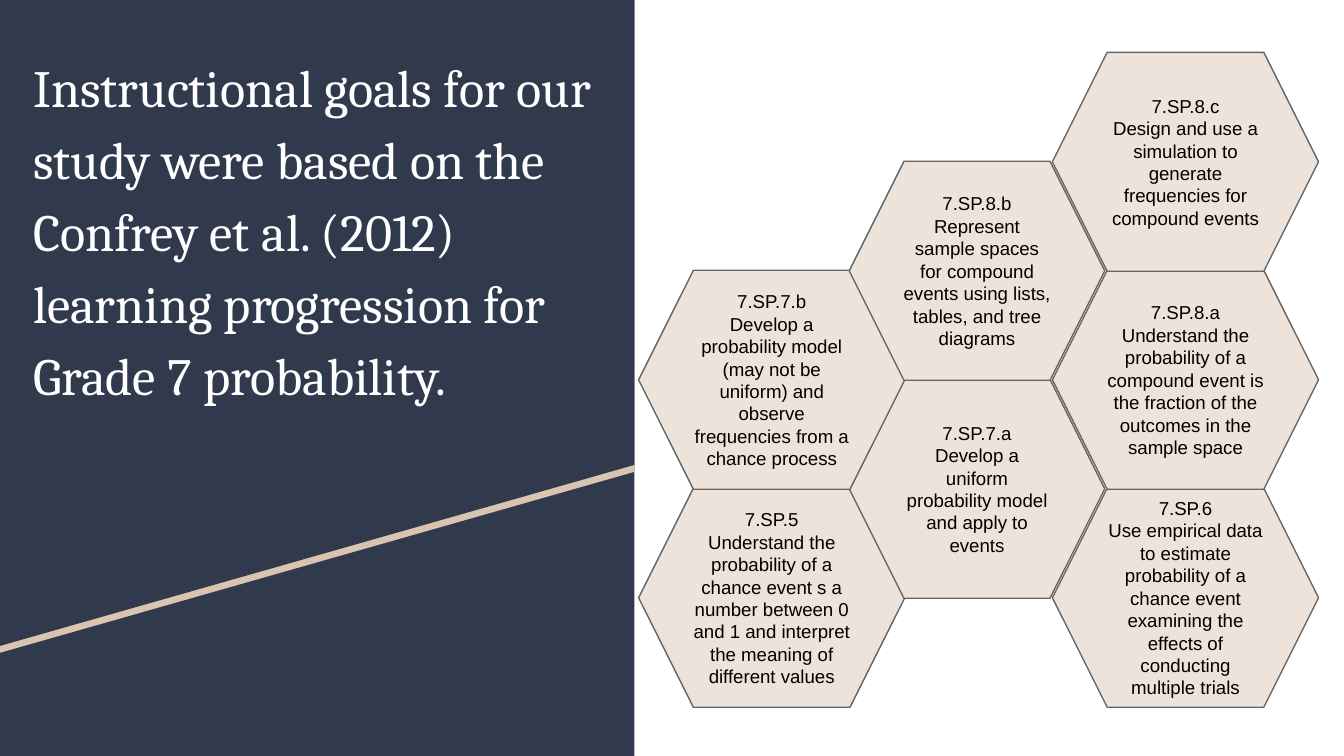
from dataclasses import dataclass

from pptx import Presentation
from pptx.dml.color import RGBColor
from pptx.enum.shapes import MSO_SHAPE as Preset
from pptx.enum.text import MSO_ANCHOR as Anchor, MSO_AUTO_SIZE as AutoSize, PP_ALIGN as Align
from pptx.util import Cm, Pt


@dataclass(frozen=True)
class Theme:
    navy: RGBColor = RGBColor(0x31, 0x39, 0x4D)
    tan: RGBColor = RGBColor(0xD9, 0xC4, 0xB1)
    cream: RGBColor = RGBColor(0xED, 0xE3, 0xDA)
    grey: RGBColor = RGBColor(0x66, 0x66, 0x66)
    white: RGBColor = RGBColor(0xFF, 0xFF, 0xFF)
    black: RGBColor = RGBColor(0, 0, 0)
    title_font: str = "Cambria"
    label_font: str = "Arial"
    title_size: Pt = Pt(28)
    label_size: Pt = Pt(10)


THEME = Theme()
SLIDE_WIDTH, SLIDE_HEIGHT = 25.4, 14.29
PANEL_WIDTH = 11.99
STRIPE_DROP = 0.13

TITLE = ("Instructional goals for our study were based on the "
         "Confrey et al. (2012) learning progression for Grade 7 probability.")

# Honeycomb columns: left edge and width; each row is half a cell lower.
COLUMNS = [(12.07, 5.03), (16.05, 4.83), (19.89, 5.03)]
FIRST_TOP, ROW_STEP, CELL_HEIGHT = 0.99, 2.06, 4.14

# Column, row, standard, goal
GOALS = [
    (0, 4, "7.SP.5", "Understand the probability of a chance event s a number "
                     "between 0 and 1 and interpret the meaning of different values"),
    (2, 4, "7.SP.6", "Use empirical data to estimate probability of a chance event "
                     "examining the effects of conducting multiple trials"),
    (1, 3, "7.SP.7.a", "Develop a uniform probability model and apply to events"),
    (0, 2, "7.SP.7.b", "Develop a probability model (may not be uniform) and observe "
                       "frequencies from a chance process"),
    (2, 2, "7.SP.8.a", "Understand the probability of a compound event is the fraction "
                       "of the outcomes in the sample space"),
    (1, 1, "7.SP.8.b", "Represent sample spaces for compound events using lists, "
                       "tables, and tree diagrams"),
    (2, 0, "7.SP.8.c", "Design and use a simulation to generate frequencies "
                       "for compound events"),
]


def write_text(shape, *lines, font, size, color, align, anchor, spacing=1.0, after=0):
    """Fill the shape with one paragraph per line."""
    frame = shape.text_frame
    frame.word_wrap = True
    frame.auto_size = AutoSize.NONE
    frame.vertical_anchor = anchor
    frame.margin_left = frame.margin_right = Cm(0.25)
    frame.margin_top = frame.margin_bottom = Cm(0.25)
    for index, line in enumerate(lines):
        para = frame.paragraphs[0] if index == 0 else frame.add_paragraph()
        para.alignment = align
        para.line_spacing = spacing
        para.space_before, para.space_after = Pt(0), Pt(after)
        span = para.add_run()
        span.text = line
        span.font.name, span.font.size = font, size
        span.font.color.rgb = color


def paint(shape, fill, line=None):
    shape.shadow.inherit = False
    shape.fill.solid()
    shape.fill.fore_color.rgb = fill
    if line is None:
        shape.line.fill.background()
    else:
        shape.line.color.rgb = line
        shape.line.width = Pt(0.75)


def add_panel(page):
    panel = page.shapes.add_shape(Preset.RECTANGLE, 0, 0, Cm(PANEL_WIDTH), Cm(SLIDE_HEIGHT))
    paint(panel, THEME.navy)


def add_slanted_panel(page, drop, color):
    """Draw a panel with a rising lower edge, moved down by drop."""
    corners = [(0, 0), (PANEL_WIDTH, 0), (PANEL_WIDTH, 8.79), (0, 12.21)]
    points = [(Cm(x), Cm(y + drop)) for x, y in corners]
    outline = page.shapes.build_freeform(*points[0])
    outline.add_line_segments(points[1:], close=True)
    paint(outline.convert_to_shape(), color)


def add_title(page):
    title = page.shapes.title
    title.left, title.top, title.width, title.height = Cm(0.38), Cm(0.61), Cm(11.84), Cm(9.5)
    write_text(title, TITLE, font=THEME.title_font, size=THEME.title_size,
               color=THEME.white, align=Align.LEFT, anchor=Anchor.TOP,
               spacing=1.15, after=16)
    page.shapes.element.append(title.element)  # in front of the panels


def add_goal(page, column, row, standard, goal):
    left, width = COLUMNS[column]
    top = FIRST_TOP + row * ROW_STEP
    cell = page.shapes.add_shape(Preset.HEXAGON, Cm(left), Cm(top), Cm(width), Cm(CELL_HEIGHT))
    paint(cell, THEME.cream, THEME.grey)
    write_text(cell, standard, goal, font=THEME.label_font, size=THEME.label_size,
               color=THEME.black, align=Align.CENTER, anchor=Anchor.MIDDLE)


def main():
    deck = Presentation()
    deck.slide_width, deck.slide_height = Cm(SLIDE_WIDTH), Cm(SLIDE_HEIGHT)
    page = deck.slides.add_slide(deck.slide_layouts.get_by_name("Title Only"))
    add_panel(page)
    add_slanted_panel(page, STRIPE_DROP, THEME.tan)
    add_slanted_panel(page, 0, THEME.navy)
    add_title(page)
    for goal in GOALS:
        add_goal(page, *goal)
    deck.save("out.pptx")


if __name__ == "__main__":
    main()
